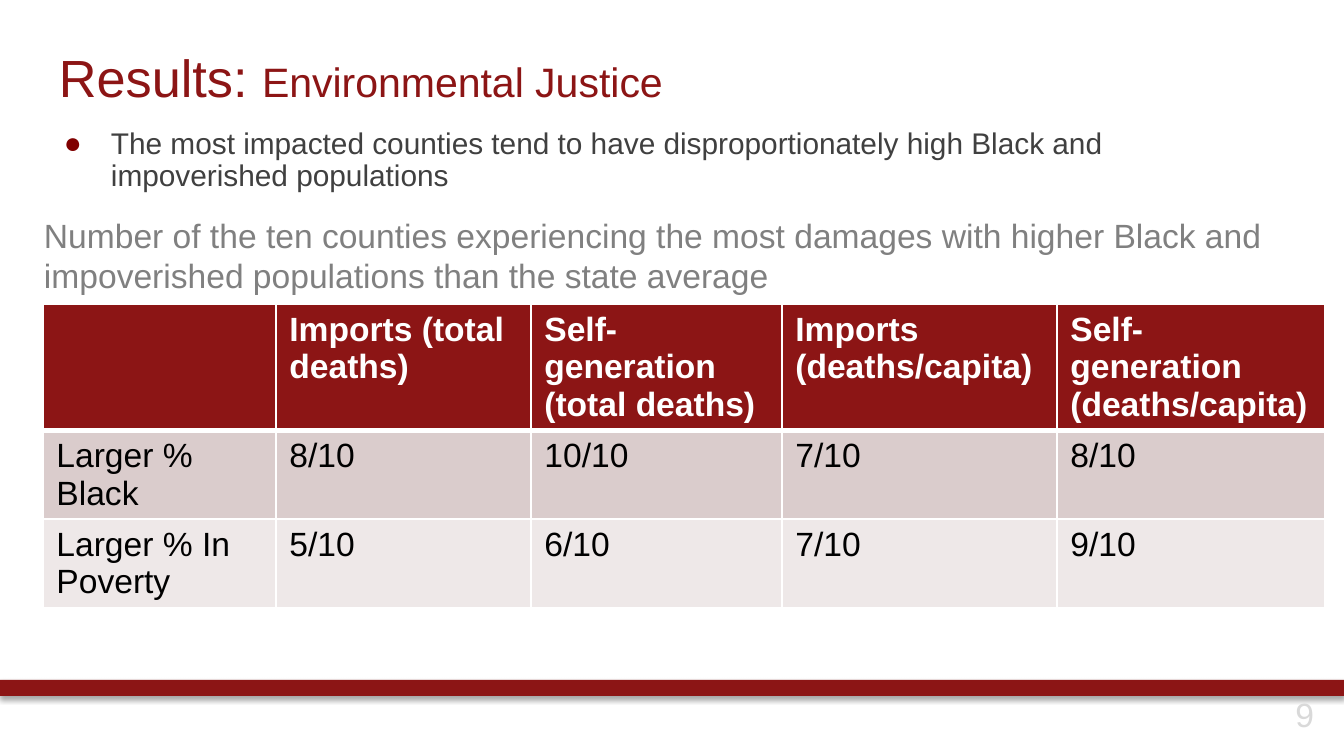
from pptx import Presentation
from pptx.dml.color import RGBColor
from pptx.enum.shapes import MSO_SHAPE as Shape
from pptx.enum.text import MSO_ANCHOR as Anchor, MSO_AUTO_SIZE as AutoSize, PP_ALIGN as Align
from pptx.oxml import parse_xml
from pptx.oxml.ns import nsdecls
from pptx.util import Inches, Pt

WIDTH, HEIGHT = 1344, 756
SCALE = Inches(10) / WIDTH
FONT = "Arial"

CARDINAL = RGBColor(0x8C, 0x15, 0x15)
MAROON = RGBColor(0x80, 0x00, 0x00)
CHARCOAL = RGBColor(0x40, 0x40, 0x40)
GRAY = RGBColor(0x80, 0x80, 0x80)
SILVER = RGBColor(0xD9, 0xD9, 0xD9)
WHITE = RGBColor(0xFF, 0xFF, 0xFF)
BLACK = RGBColor(0x00, 0x00, 0x00)
ROW_FILLS = [CARDINAL, RGBColor(0xDA, 0xCC, 0xCC), RGBColor(0xEE, 0xE8, 0xE8)]

COLUMN_WIDTHS = [233, 255, 251, 275, 268]
ROW_HEIGHT = 55
ROWS = [
    ["", "Imports (total deaths)", "Self-generation (total deaths)",
     "Imports (deaths/capita)", "Self-generation (deaths/capita)"],
    ["Larger % Black", "8/10", "10/10", "7/10", "8/10"],
    ["Larger % In Poverty", "5/10", "6/10", "7/10", "9/10"],
]


def px(length):
    return round(length * SCALE)


def set_values(target, values):
    for name, value in values.items():
        setattr(target, name, value)


def add_span(para, text, size, color, bold=False):
    span = para.add_run()
    span.text = text
    set_values(span.font, {"name": FONT, "size": Pt(size), "bold": bold})
    span.font.color.rgb = color


def format_frame(frame, inset, anchor=Anchor.TOP):
    sides, ends = inset
    set_values(frame, {
        "word_wrap": True, "auto_size": AutoSize.NONE, "vertical_anchor": anchor,
        "margin_left": px(sides), "margin_right": px(sides),
        "margin_top": px(ends), "margin_bottom": px(ends),
    })


def add_text(page, area, text, size, color, inset=(13, 13), anchor=Anchor.TOP, align=Align.LEFT):
    box = page.shapes.add_textbox(*map(px, area))
    format_frame(box.text_frame, inset, anchor)
    para = box.text_frame.paragraphs[0]
    para.alignment = align
    add_span(para, text, size, color)
    return para


def add_bullet(para, color):
    props = para._p.get_or_add_pPr()
    props.set("marL", str(px(67)))
    props.set("indent", str(px(-47)))
    props.append(parse_xml(
        f'<a:buClr {nsdecls("a")}><a:srgbClr val="{color}"/></a:buClr>'))
    props.append(parse_xml(f'<a:buFont {nsdecls("a")} typeface="{FONT}"/>'))
    props.append(parse_xml(f'<a:buChar {nsdecls("a")} char="●"/>'))


def add_title(page):
    title = page.shapes.title
    set_values(title, {"left": px(46), "top": px(32), "width": px(1253), "height": px(85)})
    format_frame(title.text_frame, (13, 13))
    para = title.text_frame.paragraphs[0]
    para.alignment = Align.LEFT
    add_span(para, "Results: ", 28, CARDINAL)
    add_span(para, "Environmental Justice", 22, CARDINAL)


def add_footer_bar(page):
    bar = page.shapes.add_shape(Shape.RECTANGLE, *map(px, (0, 680, WIDTH, 16)))
    bar.fill.solid()
    bar.fill.fore_color.rgb = CARDINAL
    bar.line.fill.background()
    bar._element.spPr.append(parse_xml(
        f'<a:effectLst {nsdecls("a")}><a:outerShdw blurRad="{Pt(3.1)}" dist="{Pt(1.8)}" '
        'dir="5400000" rotWithShape="0"><a:srgbClr val="000000"><a:alpha val="35000"/>'
        '</a:srgbClr></a:outerShdw></a:effectLst>'))


def format_cell(cell, fill, edges):
    # Borders come before the fill in the cell properties
    props = cell._tc.get_or_add_tcPr()
    for side, points in edges.items():
        props.append(parse_xml(
            f'<a:{side} {nsdecls("a")} w="{Pt(points)}"><a:solidFill>'
            f'<a:srgbClr val="{WHITE}"/></a:solidFill></a:{side}>'))
    cell.fill.solid()
    cell.fill.fore_color.rgb = fill


def add_county_table(page):
    area = (43, 304, sum(COLUMN_WIDTHS), ROW_HEIGHT * len(ROWS))
    table = page.shapes.add_table(len(ROWS), len(COLUMN_WIDTHS), *map(px, area)).table
    for column, width in zip(table.columns, COLUMN_WIDTHS):
        column.width = px(width)
    for i, (row, fill) in enumerate(zip(ROWS, ROW_FILLS)):
        header = i == 0
        edges = {"lnL": 1, "lnR": 1, "lnT": 3 if i == 1 else 1, "lnB": 3 if header else 1}
        for j, text in enumerate(row):
            cell = table.cell(i, j)
            format_cell(cell, fill, edges)
            if text:
                add_span(cell.text_frame.paragraphs[0], text, 18,
                         WHITE if header else BLACK, header)


def main():
    deck = Presentation()
    set_values(deck, {"slide_width": px(WIDTH), "slide_height": px(HEIGHT)})
    page = deck.slides.add_slide(deck.slide_layouts[5])

    # Footer bar and heading
    add_footer_bar(page)
    add_title(page)

    # Key finding
    finding = add_text(
        page, (31, 116, 1253, 503),
        "The most impacted counties tend to have disproportionately high Black and "
        "impoverished populations", 16, CHARCOAL)
    finding.line_spacing = 0.9
    add_bullet(finding, MAROON)

    # Page number
    add_text(page, (1246, 685, 81, 58), "9", 18, SILVER,
             anchor=Anchor.MIDDLE, align=Align.RIGHT)

    # Table with its caption
    add_county_table(page)
    add_text(
        page, (31, 208, 1282, 95),
        "Number of the ten counties experiencing the most damages with higher Black and "
        "impoverished populations than the state average", 18, GRAY, inset=(13, 7))

    deck.save("out.pptx")


if __name__ == "__main__":
    main()
